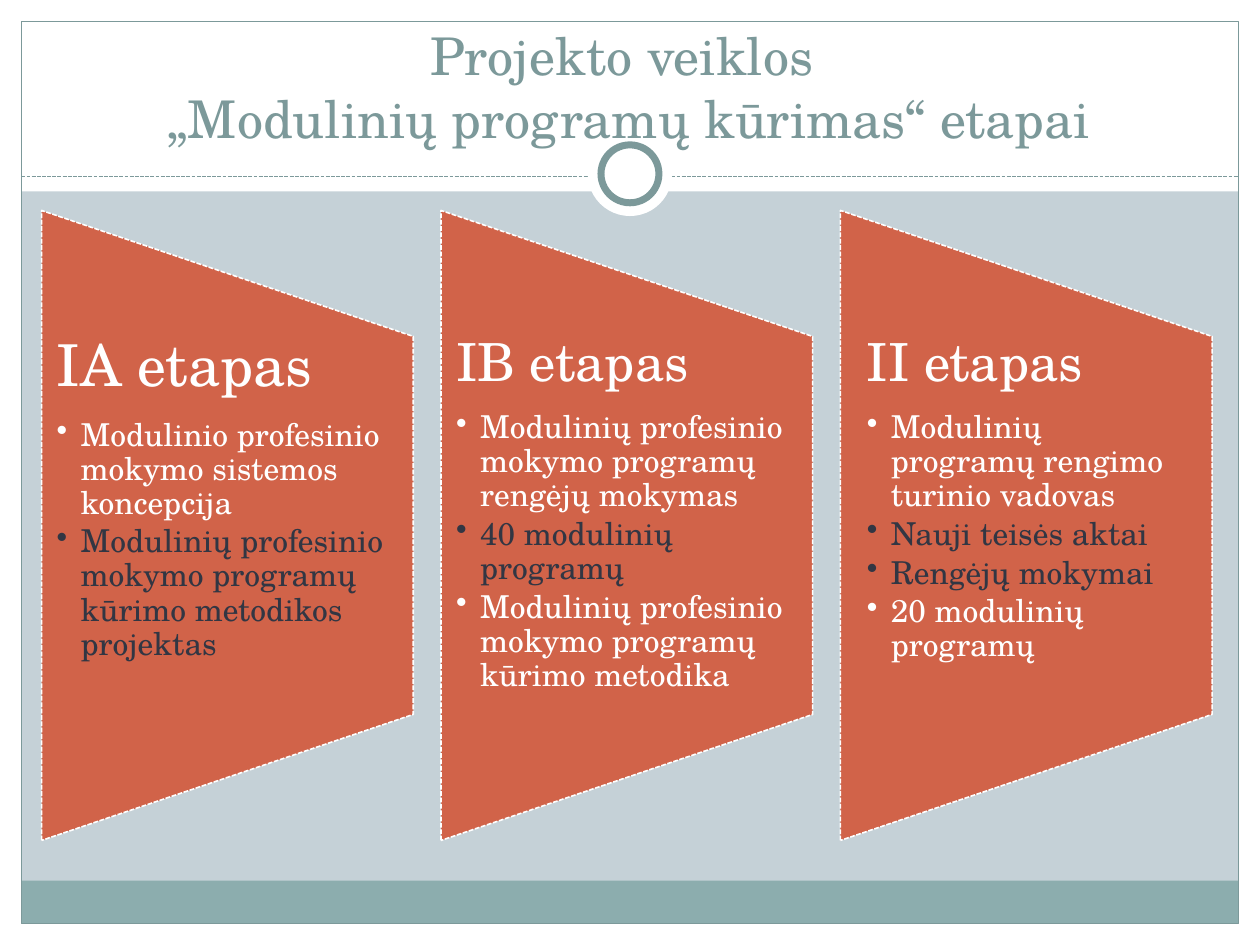
from lxml import etree
from pptx import Presentation
from pptx.dml.color import RGBColor
from pptx.enum.dml import MSO_LINE as Dash
from pptx.enum.shapes import MSO_CONNECTOR as Link, MSO_SHAPE as Form
from pptx.enum.text import MSO_ANCHOR as Anchor, PP_ALIGN as Align
from pptx.oxml.ns import qn
from pptx.util import Inches, Pt

FONT = "TeX Gyre Schola"
WHITE = RGBColor(0xFF, 0xFF, 0xFF)
MIST = RGBColor(0xC5, 0xD1, 0xD7)
TEAL = RGBColor(0x7C, 0x99, 0x9A)
SAGE = RGBColor(0x8C, 0xAD, 0xAE)
RUST = RGBColor(0xD1, 0x63, 0x49)
NAVY = RGBColor(0x32, 0x36, 0x43)

WIDTH, HEIGHT, EDGE = 10, 7.5, 0.17

TITLE = ["Projekto veiklos ", "„Modulinių programų kūrimas“ etapai"]
# Heading, heading size, side inset, bullets with their colours
STAGES = [
    ("IA etapas", 33, 0.12, [
        ("Modulinio profesinio mokymo sistemos koncepcija", WHITE),
        ("Modulinių profesinio mokymo programų kūrimo metodikos projektas", NAVY),
    ]),
    ("IB etapas", 30, 0.12, [
        ("Modulinių profesinio mokymo programų rengėjų mokymas", WHITE),
        ("40 modulinių programų", NAVY),
        ("Modulinių profesinio mokymo programų kūrimo metodika", WHITE),
    ]),
    ("II etapas", 30, 0.21, [
        ("Modulinių programų rengimo turinio vadovas", WHITE),
        ("Nauji teisės aktai", NAVY),
        ("Rengėjų mokymai", NAVY),
        ("20 modulinių programų", WHITE),
    ]),
]


def stroke(line, color, width, dash=None):
    line.color.rgb = color
    line.width = Pt(width)
    if dash:
        line.dash_style = dash


def add_form(slide, form, box, fill=None, line=None):
    shape = slide.shapes.add_shape(form, *map(Inches, box))
    shape.shadow.inherit = False
    if fill is None:
        shape.fill.background()
    else:
        shape.fill.solid()
        shape.fill.fore_color.rgb = fill
    if line:
        stroke(shape.line, *line)
    else:
        shape.line.fill.background()
    return shape


def add_box(slide, box, side, edge, anchor):
    frame = slide.shapes.add_textbox(*map(Inches, box)).text_frame
    frame.word_wrap = True
    frame.vertical_anchor = anchor
    frame.margin_left = frame.margin_right = Inches(side)
    frame.margin_top = frame.margin_bottom = Inches(edge)
    return frame


def add_run(para, text, size, color):
    run = para.add_run()
    run.text = text
    run.font.name = FONT
    run.font.size = Pt(size)
    run.font.color.rgb = color


def set_bullet(para):
    props = para._p.get_or_add_pPr()
    indent = Inches(0.19)
    props.set("marL", str(indent))
    props.set("indent", str(-indent))
    etree.SubElement(props, qn("a:buChar")).set("char", "•")


def draw_frame(slide, left, top, width, height):
    """White margins, header, footer band, outline and ring."""
    right, base = left + width, top + height
    head, inner = 1.52, width - 2 * EDGE
    for box in [
        (left, base - EDGE, width, EDGE),
        (left, top, width, head),
        (left, top, EDGE, height),
        (right - EDGE, top, EDGE, height),
    ]:
        add_form(slide, Form.RECTANGLE, box, WHITE)
    add_form(slide, Form.RECTANGLE,
             (left + EDGE, base - EDGE - 0.34, inner, 0.34), SAGE)
    add_form(slide, Form.RECTANGLE,
             (left + EDGE, top + EDGE, inner, height - 2 * EDGE),
             line=(TEAL, 0.75))

    # Dashed rule under the title
    y = top + 1.4
    rule = slide.shapes.add_connector(
        Link.STRAIGHT, *map(Inches, (left + EDGE, y, right - EDGE, y)))
    stroke(rule.line, TEAL, 0.75, Dash.SQUARE_DOT)
    etree.SubElement(rule._element.spPr, qn("a:effectLst"))

    # Ring with its white halo
    mid, level = left + width / 2, top + 1.38
    for size, line in [(0.67, None), (0.46, (TEAL, 4))]:
        add_form(slide, Form.OVAL,
                 (mid - size / 2, level - size / 2, size, size), WHITE, line)


def draw_title(slide, *box):
    frame = add_box(slide, box, 0.1, 0.05, Anchor.BOTTOM)
    para = frame.paragraphs[0]
    para.alignment = Align.CENTER
    first, second = TITLE
    add_run(para, first, 29.7, TEAL)
    para.add_line_break()
    add_run(para, second, 29.7, TEAL)


def draw_stage(slide, stage, left, top, width, height):
    name, size, side, items = stage
    # The panel is turned a quarter, so its sides swap about the centre
    turn = (height - width) / 2
    panel = add_form(slide, Form.FLOWCHART_MANUAL_OPERATION,
                     (left - turn, top + turn, height, width),
                     RUST, (WHITE, 0.9, Dash.SQUARE_DOT))
    panel.rotation = 270

    # Heading and bullets fill the middle three fifths
    frame = add_box(slide, (left, top + height / 5, width, height * 3 / 5),
                    side, 0, Anchor.TOP)
    para = frame.paragraphs[0]
    para.line_spacing = 0.9
    para.space_after = Pt(size * 0.35)
    add_run(para, name, size, WHITE)
    for text, color in items:
        para = frame.add_paragraph()
        para.level = 1
        para.line_spacing = 0.9
        para.space_after = Pt(18 * 0.15)
        set_bullet(para)
        add_run(para, text, 18, color)


def main():
    deck = Presentation()
    deck.slide_width, deck.slide_height = Inches(WIDTH), Inches(HEIGHT)
    slide = deck.slides.add_slide(deck.slide_layouts[6])
    slide.background.fill.solid()
    slide.background.fill.fore_color.rgb = MIST

    draw_frame(slide, 0, 0, WIDTH, HEIGHT)
    draw_title(slide, 0.33, 0.25, 9.33, 0.98)
    wide, gap = 2.95, 0.22
    for i, stage in enumerate(STAGES):
        draw_stage(slide, stage, 0.33 + i * (wide + gap), 1.67, wide, 5)
    deck.save("out.pptx")


if __name__ == "__main__":
    main()
